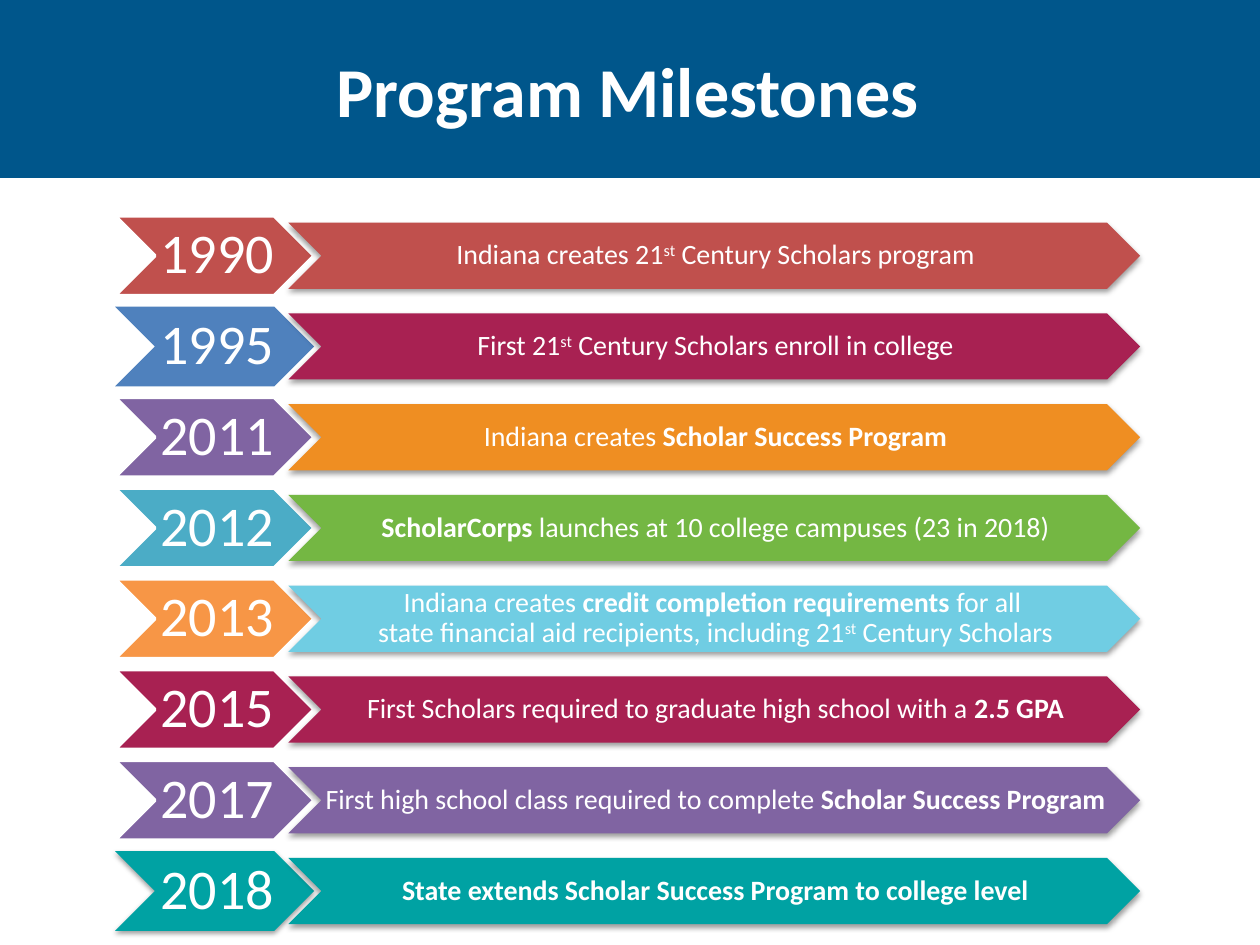
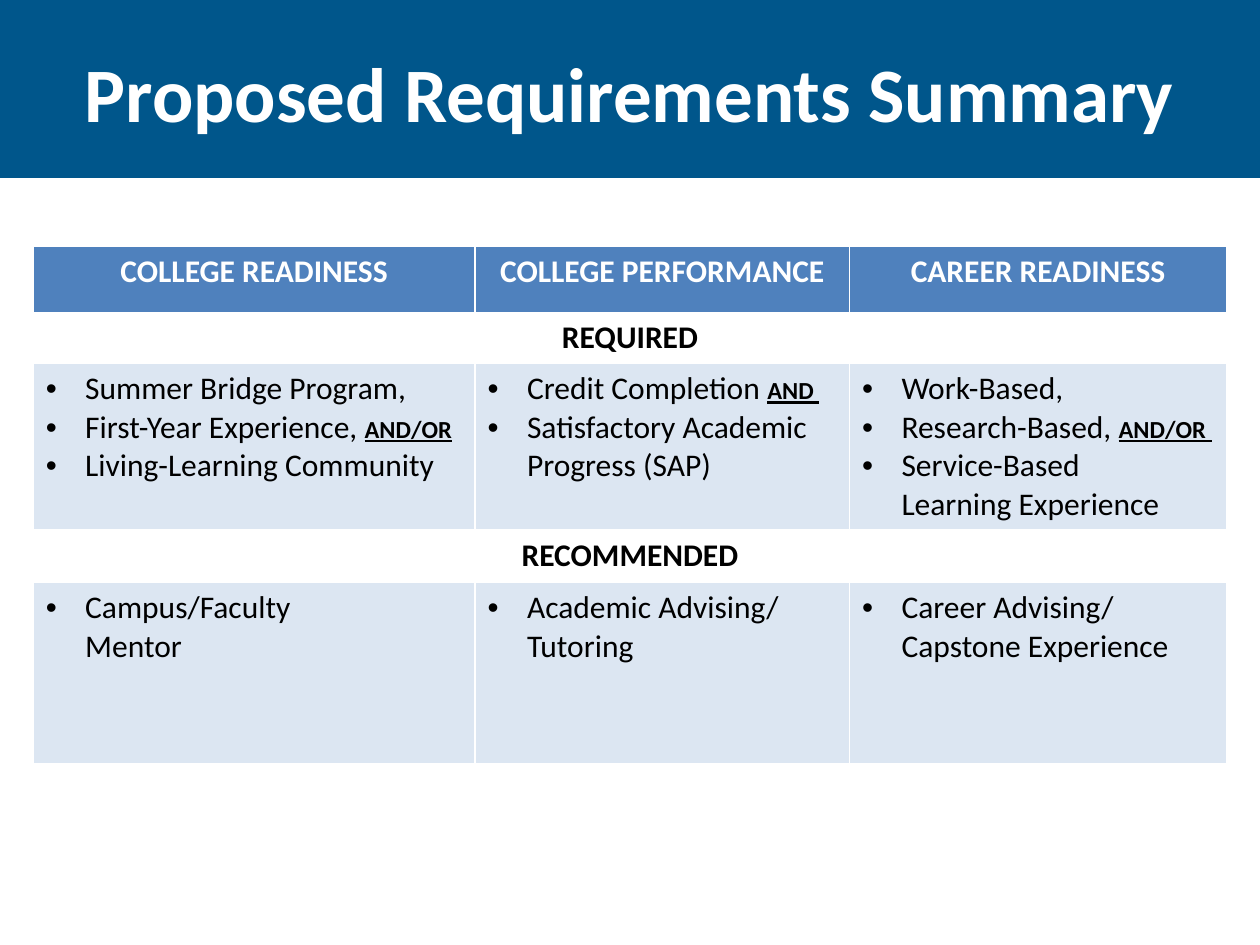
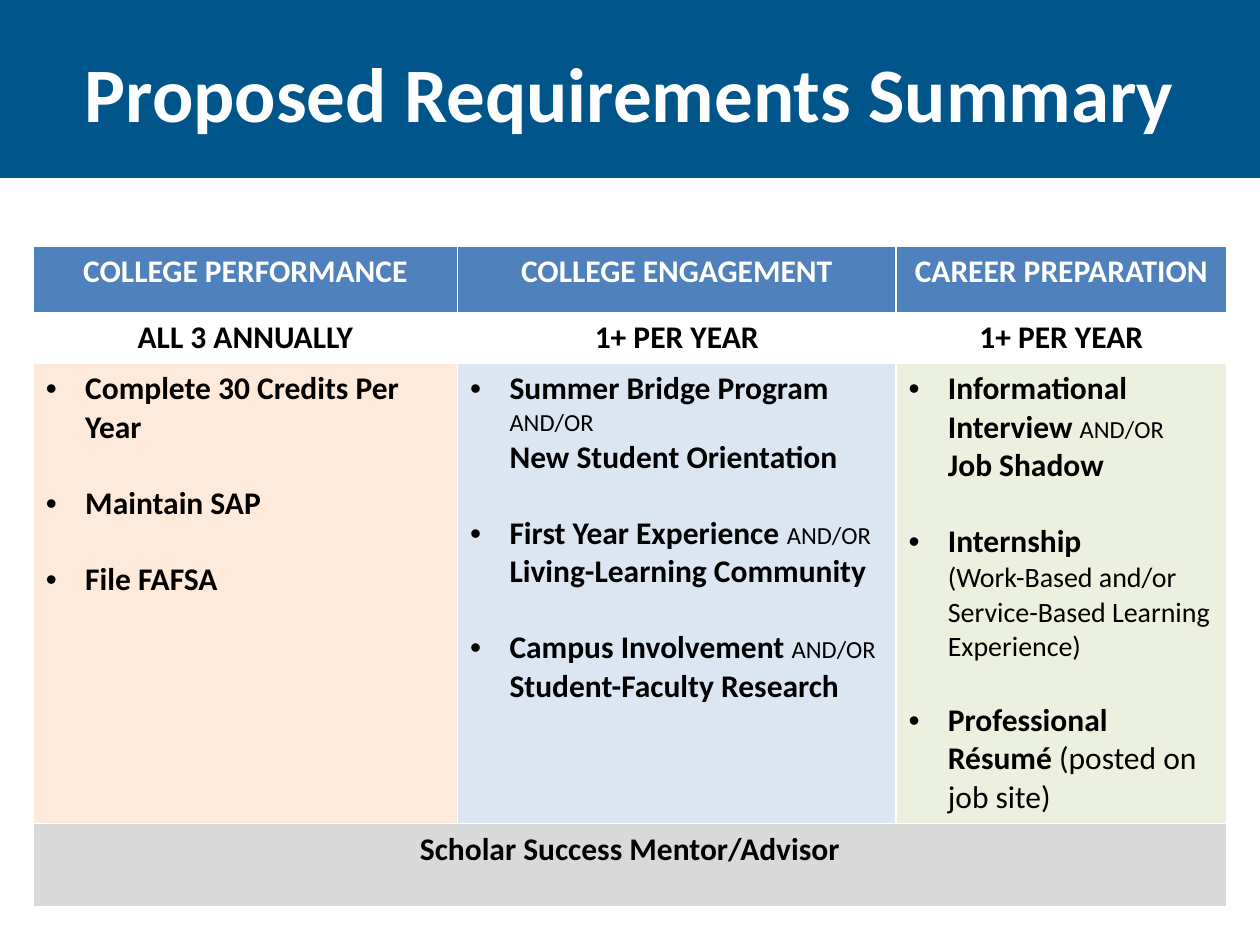
from dataclasses import dataclass

from lxml.etree import SubElement
from pptx import Presentation
from pptx.dml.color import RGBColor
from pptx.enum.shapes import MSO_SHAPE
from pptx.enum.text import MSO_ANCHOR, MSO_AUTO_SIZE, PP_ALIGN
from pptx.oxml import parse_xml
from pptx.oxml.ns import nsdecls, qn
from pptx.util import Pt


@dataclass(frozen=True)
class Theme:
    font: str = "Calibri"
    navy: str = "00568B"
    white: str = "FFFFFF"
    black: str = "000000"
    blue: str = "4F81BD"
    red: str = "C0504D"
    crimson: str = "A82152"
    purple: str = "8064A2"
    teal: str = "00A2A3"
    pale_blue: str = "DCE6F2"
    pale_orange: str = "FDEADA"
    pale_green: str = "EBF1DE"
    grey: str = "D9D9D9"
    milestone_title: int = 40
    summary_title: int = 44
    year: int = 32
    event: int = 16
    cell: int = 18
    detail: int = 16
    joiner: int = 14


THEME = Theme()

RUN_STYLES = {
    "bold": {"bold": True},
    "plain": {"bold": False},
    "detail": {"bold": False, "size": Pt(THEME.detail)},
    "and": {"bold": False, "size": Pt(THEME.joiner)},
    "AND": {"bold": True, "size": Pt(THEME.joiner), "underline": True},
}

MILESTONES = [
    ("1990", THEME.red, THEME.red,
     ["Indiana creates 21", ("st", "super"), " Century Scholars program"]),
    ("1995", THEME.blue, THEME.crimson,
     ["First 21", ("st", "super"), " Century Scholars enroll in college"]),
    ("2011", THEME.purple, "EF8E22",
     ["Indiana creates ", ("Scholar Success Program", "bold")]),
    ("2012", "4BACC6", "74B743",
     [("ScholarCorps", "bold"), " launches at 10 college campuses (23 in 2018)"]),
    ("2013", "F79646", "70CDE3",
     ["Indiana creates ", ("credit completion requirements ", "bold"),
      "for all \nstate financial aid recipients, including 21",
      ("st", "super"), " Century Scholars"]),
    ("2015", THEME.crimson, THEME.crimson,
     ["First Scholars required to graduate high school with a ", ("2.5 GPA", "bold")]),
    ("2017", THEME.purple, THEME.purple,
     ["First high school class required to complete ",
      ("Scholar Success Program", "bold")]),
    ("2018", THEME.teal, THEME.teal,
     [("State extends Scholar Success Program to college level", "bold")]),
]
WHITE_EDGED_YEARS = {"1990", "2011", "2012", "2013", "2015", "2017"}
RAISED_YEARS = {"2018"}

SUMMARIES = [
    {
        "title": "Proposed Requirements Summary",
        "widths": [252.5, 214, 215.5],
        "gap": 0,
        "bold_lists": False,
        "rows": [
            (38, "head", [THEME.blue] * 3,
             ["COLLEGE READINESS", "COLLEGE PERFORMANCE", "CAREER READINESS"]),
            (29, "label", [THEME.white], ["REQUIRED"]),
            (94, "list", [THEME.pale_blue] * 3, [
                [["Summer Bridge Program,"],
                 ["First-Year Experience, ", ("AND/OR", "AND")],
                 ["Living-Learning Community"]],
                [["Credit Completion ", ("AND ", "AND")],
                 ["Satisfactory Academic Progress (SAP)"]],
                [["Work-Based,"],
                 ["Research-Based, ", ("AND/OR ", "AND")],
                 ["Service-Based \nLearning Experience"]],
            ]),
            (30, "label", [THEME.white], ["RECOMMENDED"]),
            (103.5, "list", [THEME.pale_blue] * 3, [
                [["Campus/Faculty \nMentor"]],
                [["Academic Advising/ Tutoring"]],
                [["Career Advising/ Capstone Experience"]],
            ]),
        ],
    },
    {
        "title": "Proposed Requirements Summary",
        "widths": [242.5, 250.5, 189],
        "gap": 21.5,
        "bold_lists": True,
        "rows": [
            (38, "head", [THEME.blue] * 3,
             ["COLLEGE PERFORMANCE", "COLLEGE ENGAGEMENT", "CAREER PREPARATION"]),
            (29, "label", [THEME.white] * 3,
             ["ALL 3 ANNUALLY", "1+ PER YEAR", "1+ PER YEAR"]),
            (263, "list", [THEME.pale_orange, THEME.pale_blue, THEME.pale_green], [
                [["Complete 30 Credits Per Year"], ["Maintain SAP"], ["File FAFSA"]],
                [["Summer Bridge Program ", ("AND/OR \n", "and"),
                  "New Student Orientation"],
                 ["First Year Experience ", ("AND/OR ", "and"),
                  "Living-Learning Community"],
                 ["Campus Involvement ", ("AND/OR ", "and"),
                  "Student-Faculty Research"]],
                [["Informational Interview ", ("AND/OR \n", "and"), "Job Shadow"],
                 ["Internship \n",
                  ("(Work-Based and/or Service-Based Learning Experience)", "detail")],
                 ["Professional Résumé ", ("(posted on job site)", "plain")]],
            ]),
            (47.5, "label", [THEME.grey], ["Scholar Success Mentor/Advisor"]),
        ],
    },
]


def rgb(colour):
    return RGBColor.from_string(colour)


def format_paragraph(paragraph, size, colour, bold=False, align=PP_ALIGN.CENTER):
    paragraph.alignment = align
    font = paragraph.font
    font.name, font.size, font.bold = THEME.font, Pt(size), bold
    font.color.rgb = rgb(colour)


def write_runs(paragraph, parts):
    for part in parts:
        text, style = (part, None) if isinstance(part, str) else part
        for index, line in enumerate(text.split("\n")):
            if index:
                paragraph.add_line_break()
            if not line:
                continue
            run = paragraph.add_run()
            run.text = line
            if style == "super":
                run._r.get_or_add_rPr().set("baseline", "30000")
            for name, value in RUN_STYLES.get(style, {}).items():
                setattr(run.font, name, value)


def add_bullet(paragraph, indent=22.5):
    properties = paragraph._p.get_or_add_pPr()
    properties.set("marL", str(Pt(indent)))
    properties.set("indent", str(-Pt(indent)))
    SubElement(properties, qn("a:buFont")).set("typeface", "Arial")
    SubElement(properties, qn("a:buChar")).set("char", "•")


def add_shadow(shape):
    properties = shape._element.spPr
    properties.remove(properties.find(qn("a:effectLst")))
    properties.append(parse_xml(
        f'<a:effectLst {nsdecls("a")}>'
        f'<a:outerShdw blurRad="{Pt(3.1)}" dist="{Pt(1.6)}" dir="5400000" rotWithShape="0">'
        f'<a:srgbClr val="{THEME.black}"><a:alpha val="38000"/></a:srgbClr>'
        '</a:outerShdw></a:effectLst>'))


def add_filled(slide, kind, box, colour):
    shape = slide.shapes.add_shape(kind, *map(Pt, box))
    shape.shadow.inherit = False
    shape.fill.solid()
    shape.fill.fore_color.rgb = rgb(colour)
    shape.line.fill.background()
    return shape


def add_band_to_master(prs, slide):
    band = add_filled(slide, MSO_SHAPE.RECTANGLE, (0, 0, 720, 101.5), THEME.navy)
    band.line.color.rgb = rgb(THEME.navy)
    band.line.width = Pt(0.75)
    prs.slide_master.shapes._spTree.insert(2, band._element)


def set_title(slide, text, box, size):
    title = slide.shapes.title
    title.left, title.top, title.width, title.height = map(Pt, box)
    frame = title.text_frame
    frame.text = text
    frame.auto_size = MSO_AUTO_SIZE.NONE
    frame.vertical_anchor = MSO_ANCHOR.MIDDLE
    format_paragraph(frame.paragraphs[0], size, THEME.white, bold=True)


def add_chevron(slide, box, colour, parts, size, margins):
    chevron = add_filled(slide, MSO_SHAPE.CHEVRON, box, colour)
    frame = chevron.text_frame
    frame.word_wrap = True
    frame.vertical_anchor = MSO_ANCHOR.MIDDLE
    (frame.margin_left, frame.margin_top,
     frame.margin_right, frame.margin_bottom) = map(Pt, margins)
    paragraph = frame.paragraphs[0]
    paragraph.line_spacing = 0.9
    format_paragraph(paragraph, size, THEME.white)
    write_runs(paragraph, parts)
    return chevron


def build_milestones(slide):
    set_title(slide, "Program Milestones", (17, 11, 683, 80), THEME.milestone_title)
    first_top, pitch = 123.4, 51.86
    year_height, event_height = 45.5, 37.75
    for index, (year, year_colour, event_colour, event) in enumerate(MILESTONES):
        top = first_top + index * pitch
        year_mark = add_chevron(slide, (65.75, top, 113.75, year_height), year_colour,
                                [year], THEME.year, (3, 1.5, 0, 1.5))
        if year in WHITE_EDGED_YEARS:
            year_mark.line.color.rgb = rgb(THEME.white)
            year_mark.line.width = Pt(2)
        if year in RAISED_YEARS:
            add_shadow(year_mark)
        event_top = top + (year_height - event_height) / 2
        event_bar = add_chevron(slide, (164.75, event_top, 486.75, event_height),
                                event_colour, event, THEME.event, (1.5, 1, 0, 1))
        add_shadow(event_bar)


def fill_list(frame, items, gap, bold):
    for index, item in enumerate(items):
        paragraph = frame.add_paragraph() if index else frame.paragraphs[0]
        add_bullet(paragraph)
        if index and gap:
            paragraph.space_before = Pt(gap)
        format_paragraph(paragraph, THEME.cell, THEME.black, bold, PP_ALIGN.LEFT)
        write_runs(paragraph, item)


def build_summary(slide, summary):
    set_title(slide, summary["title"], (36, 21.5, 648, 62), THEME.summary_title)
    widths, rows = summary["widths"], summary["rows"]
    table = slide.shapes.add_table(
        len(rows), len(widths), Pt(19), Pt(140.5),
        Pt(sum(widths)), Pt(sum(row[0] for row in rows))).table
    for column, width in zip(table.columns, widths):
        column.width = Pt(width)
    for row_index, (height, kind, fills, contents) in enumerate(rows):
        table.rows[row_index].height = Pt(height)
        if len(contents) == 1:
            table.cell(row_index, 0).merge(table.cell(row_index, len(widths) - 1))
        for column_index, (colour, content) in enumerate(zip(fills, contents)):
            cell = table.cell(row_index, column_index)
            cell.fill.solid()
            cell.fill.fore_color.rgb = rgb(colour)
            if kind == "list":
                fill_list(cell.text_frame, content, summary["gap"], summary["bold_lists"])
            else:
                paragraph = cell.text_frame.paragraphs[0]
                text_colour = THEME.white if kind == "head" else THEME.black
                format_paragraph(paragraph, THEME.cell, text_colour, bold=True)
                write_runs(paragraph, [content])


def main():
    prs = Presentation()
    prs.slide_width, prs.slide_height = Pt(720), Pt(540)
    title_only = prs.slide_layouts[5]
    milestones = prs.slides.add_slide(title_only)
    add_band_to_master(prs, milestones)
    build_milestones(milestones)
    for summary in SUMMARIES:
        build_summary(prs.slides.add_slide(title_only), summary)
    prs.save("out.pptx")


if __name__ == "__main__":
    main()
